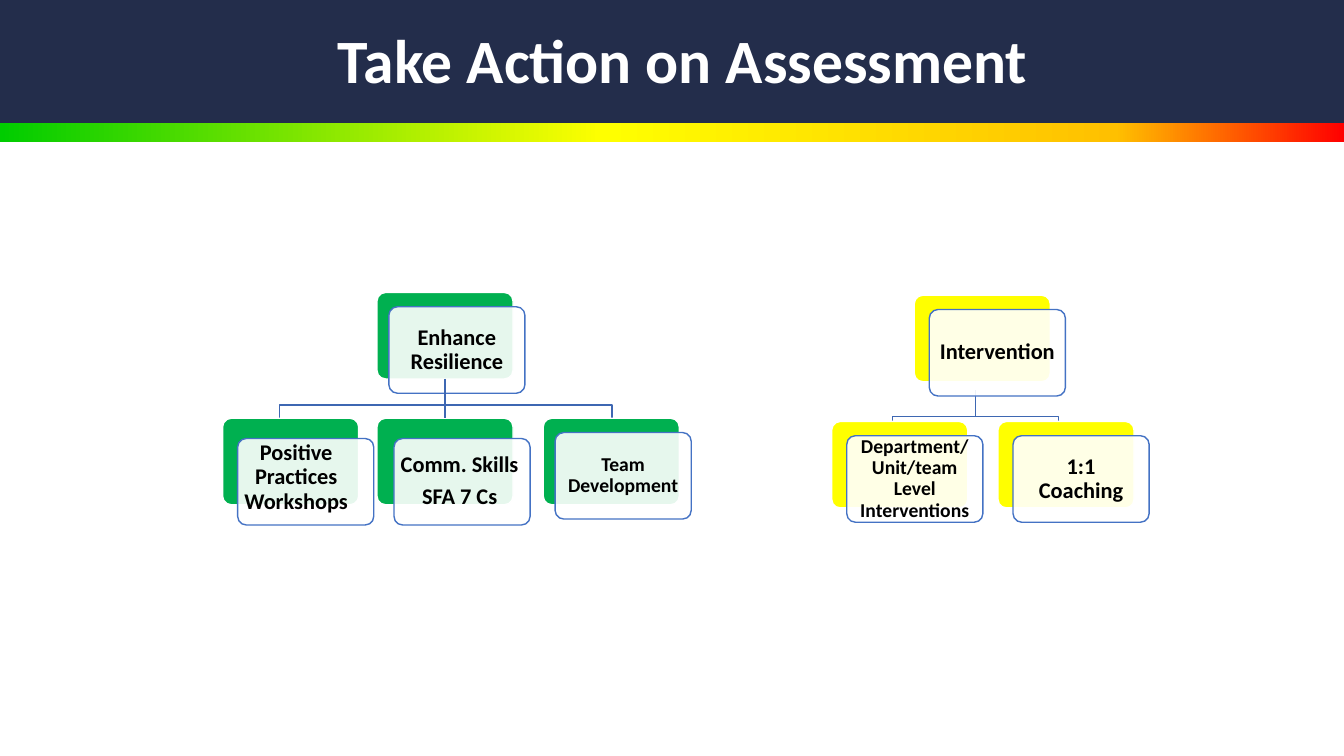
from lxml import etree
from pptx import Presentation
from pptx.dml.color import RGBColor
from pptx.enum.shapes import MSO_CONNECTOR, MSO_SHAPE
from pptx.enum.text import MSO_ANCHOR, MSO_AUTO_SIZE, PP_ALIGN
from pptx.oxml.ns import qn
from pptx.util import Cm, Pt

COLORS = {
    "navy": "232D4B", "white": "FFFFFF", "black": "000000",
    "green": "00B050", "yellow": "FFFF00",
    "outline": "4472C4", "branch": "3E67B2",
}
RISK_SCALE = [(0, "00CC00"), (45, "FFFF00"), (83, "FFC000"), (100, "FF0000")]
SLIDE_W, SLIDE_H = 33.87, 19.05
BOX_W, BOX_H = 3.43, 2.18
BUS_DROP, BRANCH_DROP = 0.66, 0.99


def rgb(name):
    return RGBColor.from_string(COLORS[name])


def write(tf, lines, size=16, color="black", align=PP_ALIGN.CENTER, after=0.0):
    """Fill a text frame with one paragraph per line; after is a share of the size."""
    tf.word_wrap = True
    tf.auto_size = MSO_AUTO_SIZE.NONE
    tf.vertical_anchor = MSO_ANCHOR.MIDDLE
    for i, line in enumerate(lines):
        p = tf.add_paragraph() if i else tf.paragraphs[0]
        p.alignment = align
        p.line_spacing = 0.9
        p.space_after = Pt(round(size * after, 1))
        r = p.add_run()
        r.text = line
        r.font.name = "Calibri"
        r.font.size = Pt(size)
        r.font.bold = True
        r.font.color.rgb = rgb(color)


class Deck:
    """Holds the slide and draws each kind of element in its style."""

    def __init__(self, prs):
        self.s = prs.slides.add_slide(prs.slide_layouts[5])

    def shape(self, kind, x, y, w, h, fill, line=None):
        sp = self.s.shapes.add_shape(kind, Cm(x), Cm(y), Cm(w), Cm(h))
        sp.shadow.inherit = False
        sp.fill.solid()
        sp.fill.fore_color.rgb = rgb(fill)
        if line:
            sp.line.color.rgb = rgb(line)
            sp.line.width = Pt(1)
        else:
            sp.line.fill.background()
        return sp

    def band(self, y, h, fill):
        return self.shape(MSO_SHAPE.RECTANGLE, 0, y, SLIDE_W, h, fill)

    def gradient_band(self, y, h, stops):
        sp = self.band(y, h, "white")
        sp.fill.gradient()
        sp.fill.gradient_angle = 0
        gs_list = sp._element.spPr.find(f".//{qn('a:gsLst')}")
        for gs in list(gs_list):
            gs_list.remove(gs)
        for percent, color in stops:
            gs = etree.SubElement(gs_list, qn("a:gs"), pos=str(percent * 1000))
            etree.SubElement(gs, qn("a:srgbClr"), val=color)

    def title(self, text, x, y, w, h):
        sp = self.s.shapes.title
        sp.left, sp.top, sp.width, sp.height = Cm(x), Cm(y), Cm(w), Cm(h)
        write(sp.text_frame, [text], size=44, color="white", align=PP_ALIGN.LEFT)
        self.s.shapes._spTree.append(sp._element)  # in front of the bands

    def rounded(self, x, y, fill, line):
        sp = self.shape(MSO_SHAPE.ROUNDED_RECTANGLE, x, y, BOX_W, BOX_H, fill, line)
        sp.adjustments[0] = 0.1
        return sp

    def node(self, x, y, color, lines, size=16, shift=(0.38, 0.36),
             insets=(0.17, 0.17, 0.17, 0.17)):
        """Draw a coloured box with a shifted white card over it; return the box."""
        box = self.rounded(x, y, color, "white")
        card = self.rounded(x + shift[0], y + shift[1], "white", "outline")
        clr = card._element.spPr.find(f"{qn('a:solidFill')}/{qn('a:srgbClr')}")
        etree.SubElement(clr, qn("a:alpha"), val="90000")
        tf = card.text_frame
        (tf.margin_left, tf.margin_top,
         tf.margin_right, tf.margin_bottom) = map(Cm, insets)
        write(tf, lines, size=size, after=0.35)
        return box

    def branches(self, x, y, reach):
        """Draw bent lines from a parent to children on its left and right."""
        for end_x in (x - reach, x + reach):
            path = self.s.shapes.build_freeform(Cm(x), Cm(y))
            path.add_line_segments(
                [(Cm(x), Cm(y + BUS_DROP)), (Cm(end_x), Cm(y + BUS_DROP)),
                 (Cm(end_x), Cm(y + BRANCH_DROP))], close=False)
            sp = path.convert_to_shape()
            sp.shadow.inherit = False
            sp.fill.background()
            sp.line.color.rgb = rgb("branch")
            sp.line.width = Pt(1)

    def stem(self, parent, child):
        cx = self.s.shapes.add_connector(MSO_CONNECTOR.STRAIGHT, 0, 0, 0, 0)
        cx.begin_connect(parent, 2)
        cx.end_connect(child, 0)
        cx.line.color.rgb = rgb("branch")
        cx.line.width = Pt(1)
        etree.SubElement(cx._element.spPr, qn("a:effectLst"))


def main():
    prs = Presentation()
    prs.slide_width, prs.slide_height = Cm(SLIDE_W), Cm(SLIDE_H)
    deck = Deck(prs)

    deck.gradient_band(3.1, 0.48, RISK_SCALE)
    deck.band(0, 3.1, "navy")
    deck.title("Take Action on Assessment", 8.26, 0.2, 24.77, 2.79)

    deck.branches(24.59, 9.83, reach=2.09)
    deck.node(23.04, 7.44, "yellow", ["Intervention"])
    deck.node(20.96, 10.62, "yellow",
              ["Department/ Unit/team Level Interventions"], size=14)
    deck.node(25.15, 10.62, "yellow", ["1:1 Coaching"])

    deck.branches(11.23, 9.55, reach=4.19)
    resilience = deck.node(9.5, 7.37, "green", ["Enhance Resilience"],
                           shift=(0.3, 0.36))
    deck.node(5.61, 10.54, "green", ["Positive Practices Workshops"],
              shift=(0.38, 0.51), insets=(0, 0.1, 0.48, 0.3))
    skills = deck.node(9.5, 10.54, "green", ["Comm. Skills", "SFA 7 Cs"],
                       shift=(0.43, 0.51), insets=(0.1, 0.17, 0.22, 0.17))
    deck.node(13.69, 10.54, "green", ["Team Development"], size=14,
              shift=(0.3, 0.36))
    deck.stem(resilience, skills)

    prs.save("out.pptx")


if __name__ == "__main__":
    main()
